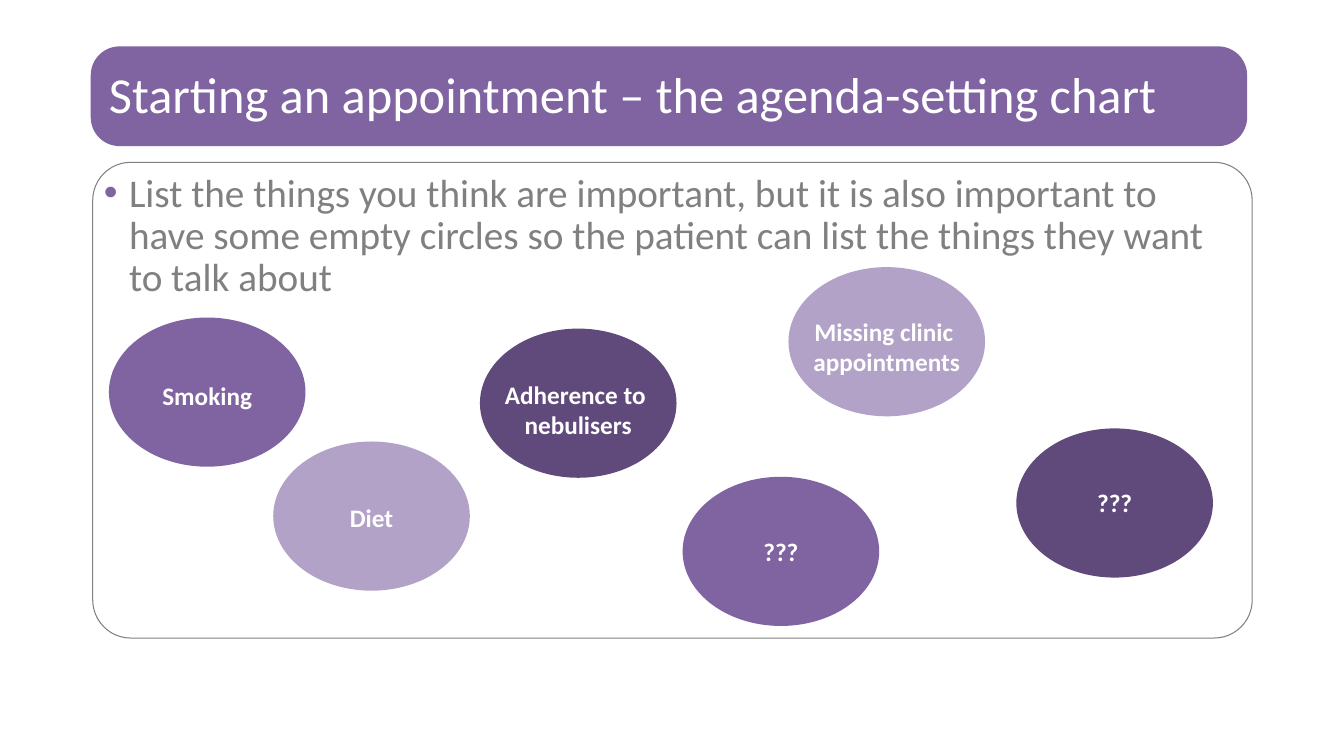
from lxml import etree
from pptx import Presentation
from pptx.dml.color import RGBColor
from pptx.enum.shapes import MSO_SHAPE
from pptx.enum.text import MSO_ANCHOR, PP_ALIGN
from pptx.oxml.ns import qn
from pptx.util import Inches, Pt

COLORS = {
    "purple": "8064A2",
    "light": "B3A2C7",
    "dark": "604A7B",
    "grey": "808080",
    "white": "FFFFFF",
}


def add_filled(shapes, kind, left, top, width, height, color=None):
    shape = shapes.add_shape(kind, Inches(left), Inches(top), Inches(width), Inches(height))
    shape.shadow.inherit = False
    shape.line.fill.background()
    if color:
        shape.fill.solid()
        shape.fill.fore_color.rgb = RGBColor.from_string(COLORS[color])
    else:
        shape.fill.background()
    return shape


def style_text(frame, size, color, align, bold=False, spacing=None, margin=None):
    if margin is not None:
        frame.margin_left = frame.margin_right = Inches(margin)
        frame.margin_top = frame.margin_bottom = Inches(margin)
    for paragraph in frame.paragraphs:
        paragraph.alignment = align
        if spacing:
            paragraph.line_spacing = spacing
        for run in paragraph.runs:
            run.font.name = "Calibri"
            run.font.size = Pt(size)
            run.font.bold = bold
            run.font.color.rgb = RGBColor.from_string(COLORS[color])


prs = Presentation()
prs.slide_width, prs.slide_height = Inches(13.33), Inches(7.5)
slide = prs.slides.add_slide(prs.slide_layouts[6])

# Title bar
banner = add_filled(slide.shapes, MSO_SHAPE.ROUNDED_RECTANGLE, 0.9, 0.46, 11.47, 0.99, "purple")
banner.adjustments[0] = 0.29
title = slide.shapes.add_textbox(Inches(1.08), Inches(0.62), Inches(11.18), Inches(0.72)).text_frame
title.word_wrap = True
title.vertical_anchor = MSO_ANCHOR.MIDDLE
title.text = "Starting an appointment – the agenda-setting chart"
style_text(title, 36, "white", PP_ALIGN.LEFT, spacing=0.8, margin=0)

# Outlined panel with the bulleted advice
panel = add_filled(slide.shapes, MSO_SHAPE.ROUNDED_RECTANGLE, 0.92, 1.61, 11.5, 4.72)
panel.adjustments[0] = 0.08
panel.line.color.rgb = RGBColor.from_string(COLORS["grey"])
panel.line.width = Pt(0.75)
advice = panel.text_frame
advice.word_wrap = True
advice.vertical_anchor = MSO_ANCHOR.TOP
advice.text = (
    "List the things you think are important, but it is also important to have "
    "some empty circles so the patient can list the things they want to talk about"
)
bullet = advice.paragraphs[0]._p.get_or_add_pPr()
bullet.set("marL", str(Inches(0.25)))
bullet.set("indent", str(Inches(-0.25)))
bullet_color = etree.SubElement(bullet, qn("a:buClr"))
etree.SubElement(bullet_color, qn("a:srgbClr"), val=COLORS["purple"])
etree.SubElement(bullet, qn("a:buFont"), typeface="Arial")
etree.SubElement(bullet, qn("a:buChar"), char="•")
style_text(advice, 28, "grey", PP_ALIGN.LEFT, spacing=0.9, margin=0)

# Agenda circles: left, top, colour, label, label top, label width
CIRCLE_W, CIRCLE_H = 1.95, 1.48
LINE_H, LABEL_PADDING = 0.3, 0.1
topics = [
    (2.71, 4.38, "light", "Diet", 4.93, 0.63),
    (1.08, 3.15, "purple", "Smoking", 3.72, 1.1),
    (4.76, 3.26, "dark", "Adherence to \nnebulisers", 3.71, 1.67),
    (7.82, 2.65, "light", "Missing clinic \nappointments", 3.09, 1.66),
    (6.77, 4.73, "purple", "???", 5.27, 0.55),
    (10.08, 4.25, "dark", "???", 4.79, 0.55),
]
for left, top, color, topic, label_top, label_width in topics:
    group = slide.shapes.add_group_shape()
    add_filled(group.shapes, MSO_SHAPE.OVAL, left, top, CIRCLE_W, CIRCLE_H, color)
    label_left = left + (CIRCLE_W - label_width) / 2
    label_height = LABEL_PADDING + LINE_H * len(topic.split("\n"))
    label = group.shapes.add_textbox(
        Inches(label_left), Inches(label_top), Inches(label_width), Inches(label_height)
    ).text_frame
    label.word_wrap = False
    label.text = topic
    style_text(label, 18, "white", PP_ALIGN.CENTER, bold=True)

prs.save("out.pptx")
